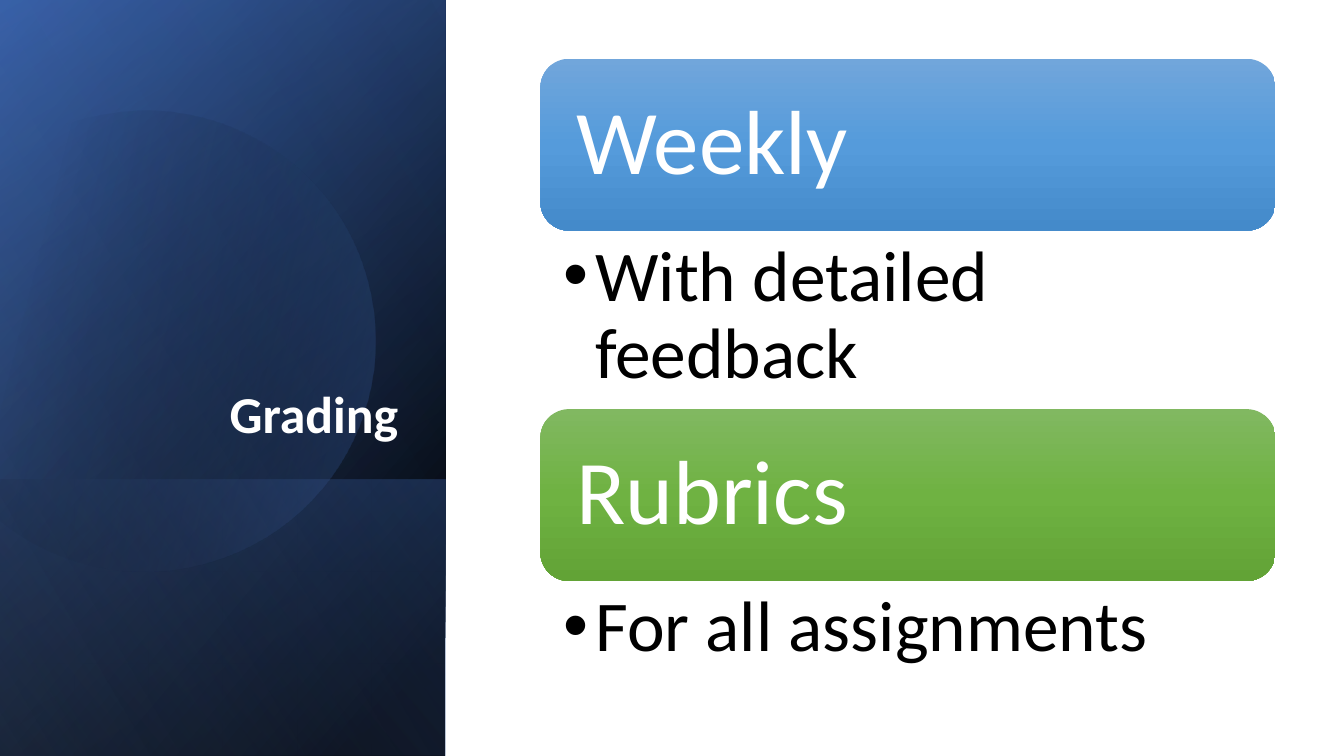
from math import cos, radians, sin

from pptx import Presentation
from pptx.dml.color import RGBColor
from pptx.enum.shapes import MSO_SHAPE
from pptx.enum.text import MSO_ANCHOR, MSO_AUTO_SIZE, PP_ALIGN
from pptx.oxml import parse_xml
from pptx.oxml.ns import nsdecls, qn
from pptx.util import Pt

RECTANGLE, ROUNDED = MSO_SHAPE.RECTANGLE, MSO_SHAPE.ROUNDED_RECTANGLE
TOP, MIDDLE, BOTTOM = MSO_ANCHOR.TOP, MSO_ANCHOR.MIDDLE, MSO_ANCHOR.BOTTOM
LEFT, RIGHT = PP_ALIGN.LEFT, PP_ALIGN.RIGHT
NO_FIT = MSO_AUTO_SIZE.NONE

COLORS = {
    "black": "000000", "white": "FFFFFF",
    "navy": "2F5597", "blue": "4472C4", "pale": "8FAADC",
    "sky_top": "71A6DB", "sky": "559BDB", "sky_low": "448ACA",
    "green_top": "81B861", "green": "6FB242", "green_low": "62A336",
}
FONT = "Calibri"
SLIDE_WIDTH, SLIDE_HEIGHT = 960, 540
PANEL_WIDTH = 318.24

# Side panel layers: top, height, gradient angle, stops (position, color, opacity)
PANEL_LAYERS = [
    (0, 540, 50, [(8, "black", 100), (100, "navy", 100)]),
    (0, 540, 30, [(0, "black", 0), (99, "blue", 46)]),
    (342.72, 197.28, 130, [(2, "blue", 29), (100, "black", 30)]),
]
SHEEN = (0, 540, 120, [(0, "black", 0), (99, "pale", 11)])

# Disc outline in inches as it lies on the slide: start, then cubic curves
DISC_START = (1.49, 1.1)
DISC_RIGHT = [
    [(2.46, 1.12), (3.35, 1.77), (3.63, 2.75)],
    [(3.98, 3.97), (3.28, 5.23), (2.07, 5.58)],
    [(1.31, 5.8), (0.53, 5.61), (-0.03, 5.14)],
]
DISC_EDGE = [(-0.15, 5.03), (-0.15, 1.75), (0, 1.61)]
DISC_TOP = [
    [(0.23, 1.42), (0.5, 1.28), (0.8, 1.19)],
    [(1.03, 1.13), (1.26, 1.1), (1.49, 1.1)],
]
DISC_CENTER = (1.585, 3.345)
DISC_TURN = 343.9

# Sections: heading, gradient colors, detail, detail height
SECTIONS = [
    ("Weekly", ("sky_top", "sky", "sky_low"), "With detailed feedback", 127.5),
    ("Rubrics", ("green_top", "green", "green_low"), "For all assignments", 85),
]
SECTION_LEFT, SECTION_TOP, SECTION_WIDTH = 386, 42, 525
CARD_HEIGHT, CARD_INSET = 122.75, 6.2


def paint(shape, angle, stops):
    """Give a shape a linear gradient, no outline and no shadow."""
    shape.shadow.inherit = False
    shape.line.fill.background()
    shape.fill.background()
    stop_xml = "".join(
        f'<a:gs pos="{position * 1000}"><a:srgbClr val="{COLORS[color]}">'
        f'<a:alpha val="{opacity * 1000}"/></a:srgbClr></a:gs>'
        for position, color, opacity in stops)
    gradient = parse_xml(
        f'<a:gradFill {nsdecls("a")} rotWithShape="1"><a:gsLst>{stop_xml}</a:gsLst>'
        f'<a:lin ang="{angle * 60000}" scaled="0"/></a:gradFill>')
    properties = shape._element.spPr
    properties.replace(properties.find(qn("a:noFill")), gradient)


def add_panel_layer(slide, top, height, angle, stops):
    """Add a mirrored rectangle, turned a quarter, that spans the side panel."""
    left = (PANEL_WIDTH - height) / 2
    shape = slide.shapes.add_shape(
        RECTANGLE, Pt(left), Pt(top - left), Pt(height), Pt(PANEL_WIDTH))
    shape.rotation = 90
    shape._element.spPr.find(qn("a:xfrm")).set("flipH", "1")
    paint(shape, angle, stops)


def trace_curves(start, curves, steps=24):
    """Return points along a chain of cubic curves."""
    points = []
    for first, second, end in curves:
        for step in range(1, steps + 1):
            t = step / steps
            u = 1 - t
            points.append(tuple(
                u**3 * a + 3 * u**2 * t * b + 3 * u * t**2 * c + t**3 * d
                for a, b, c, d in zip(start, first, second, end)))
        start = end
    return points


def add_disc(slide):
    """Add the cropped disc, drawn upright and then rotated into place."""
    outline = ([DISC_START] + trace_curves(DISC_START, DISC_RIGHT)
               + DISC_EDGE + trace_curves(DISC_EDGE[-1], DISC_TOP))
    center_x, center_y = DISC_CENTER
    cosine, sine = cos(radians(DISC_TURN)), sin(radians(DISC_TURN))
    points = []
    for x, y in outline:
        dx, dy = x - center_x, y - center_y
        points.append((Pt(72 * (center_x + dx * cosine + dy * sine)),
                       Pt(72 * (center_y - dx * sine + dy * cosine))))
    builder = slide.shapes.build_freeform(*points[0])
    builder.add_line_segments(points[1:], close=True)
    disc = builder.convert_to_shape()
    disc.rotation = DISC_TURN
    paint(disc, 30, [(29, "black", 0), (100, "blue", 43)])


def write_text(shape, box, text, size, color, anchor=TOP, alignment=LEFT,
               bold=False, insets=(7.2, 3.6, 7.2, 3.6)):
    """Place a text shape, fill in its text and return the paragraph."""
    for name, value in zip(("left", "top", "width", "height"), box):
        setattr(shape, name, Pt(value))
    frame = shape.text_frame
    frame.text = text
    paragraph = frame.paragraphs[0]
    for side, inset in zip(("left", "top", "right", "bottom"), insets):
        setattr(frame, f"margin_{side}", Pt(inset))
    formats = [
        (frame, {"word_wrap": True, "auto_size": NO_FIT, "vertical_anchor": anchor}),
        (paragraph, {"alignment": alignment, "line_spacing": 0.9, "space_before": Pt(0)}),
        (paragraph.runs[0].font, {"name": FONT, "size": Pt(size), "bold": bold}),
    ]
    for target, values in formats:
        for name, value in values.items():
            setattr(target, name, value)
    paragraph.runs[0].font.color.rgb = RGBColor.from_string(COLORS[color])
    return paragraph


def add_bullet(paragraph, indent):
    """Give a paragraph a round bullet with a hanging indent."""
    paragraph.level = 1
    properties = paragraph._p.get_or_add_pPr()
    properties.set("marL", str(Pt(indent)))
    properties.set("indent", str(-Pt(indent)))
    properties.append(parse_xml(f'<a:buFont {nsdecls("a")} typeface="Arial"/>'))
    properties.append(parse_xml(f'<a:buChar {nsdecls("a")} char="•"/>'))


def add_card(slide, top, heading, colors):
    """Add a rounded card with its heading."""
    card = slide.shapes.add_shape(
        ROUNDED, Pt(SECTION_LEFT), Pt(top), Pt(SECTION_WIDTH), Pt(CARD_HEIGHT))
    paint(card, 90, [(50 * i, color, 100) for i, color in enumerate(colors)])
    box = (SECTION_LEFT + CARD_INSET, top + CARD_INSET,
           SECTION_WIDTH - 2 * CARD_INSET, CARD_HEIGHT - 2 * CARD_INSET)
    label = slide.shapes.add_textbox(0, 0, 0, 0)
    write_text(label, box, heading, 65, "white", MIDDLE, insets=(19.5,) * 4)


def main():
    presentation = Presentation()
    presentation.slide_width, presentation.slide_height = Pt(SLIDE_WIDTH), Pt(SLIDE_HEIGHT)
    slide = presentation.slides.add_slide(presentation.slide_layouts[3])
    title, *details = slide.placeholders

    # Side panel with the title on top of it
    for layer in PANEL_LAYERS:
        add_panel_layer(slide, *layer)
    add_disc(slide)
    add_panel_layer(slide, *SHEEN)
    slide.shapes._spTree.append(title._element)
    write_text(title, (36.7, 132.5, 254.9, 188.6), "Grading", 37, "white",
               BOTTOM, RIGHT, bold=True)

    # Cards, each followed by its detail
    top = SECTION_TOP
    for (heading, colors, text, height), detail in zip(SECTIONS, details):
        add_card(slide, top, heading, colors)
        top += CARD_HEIGHT
        box = (SECTION_LEFT, top, SECTION_WIDTH, height)
        paragraph = write_text(detail, box, text, 51, "black",
                               insets=(16.7, 6.5, 36.7, 6.5))
        add_bullet(paragraph, 22.5)
        top += height

    presentation.save("out.pptx")


if __name__ == "__main__":
    main()
